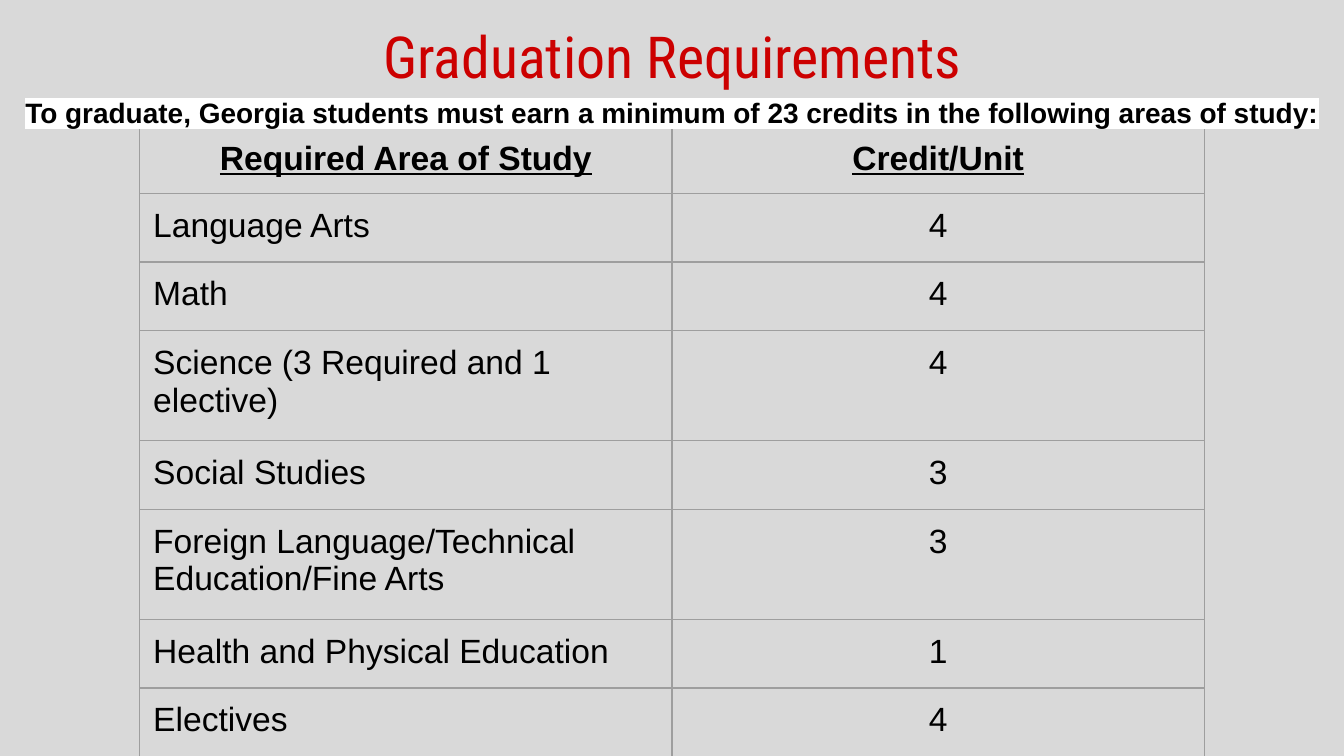
from dataclasses import dataclass

from lxml import etree
from pptx import Presentation
from pptx import util as u
from pptx.dml.color import RGBColor
from pptx.enum import text
from pptx.oxml import ns


@dataclass
class Style:
    size: float
    color: str = "000000"
    font: str = "Arial"
    bold: bool = False
    underline: bool = False
    highlight: str = ""
    align: text.PP_ALIGN = text.PP_ALIGN.LEFT


@dataclass
class Requirement:
    area: str
    credits: str
    height: float = 0.51


CENTER = text.PP_ALIGN.CENTER
TITLE = Style(31, "CC0000", "Roboto Condensed", align=CENTER)
INTRO = Style(15, bold=True, highlight="FFFFFF")
HEADER = Style(18, bold=True, underline=True, align=CENTER)
AREA = Style(18)
CREDIT = Style(18, align=CENTER)

REQUIREMENTS = [
    Requirement("Required Area of Study", "Credit/Unit", 0.5),
    Requirement("Language Arts", "4"),
    Requirement("Math", "4"),
    Requirement("Science (3 Required and 1 elective)", "4", 0.82),
    Requirement("Social Studies", "3"),
    Requirement("Foreign Language/Technical Education/Fine Arts", "3", 0.82),
    Requirement("Health and Physical Education", "1"),
    Requirement("Electives", "4"),
]


def rgb(color: str) -> RGBColor:
    return RGBColor.from_string(color)


def add_solid(parent, tag: str, color: str):
    el = etree.SubElement(parent, ns.qn(tag))
    etree.SubElement(el, ns.qn("a:srgbClr"), val=color)
    return el


def set_insets(obj, inset: float = 0.1) -> None:
    for side in ("left", "top", "right", "bottom"):
        setattr(obj, f"margin_{side}", u.Inches(inset))


def write(tf, content: str, style: Style) -> None:
    tf.text = content
    tf.word_wrap = True
    p = tf.paragraphs[0]
    p.alignment = style.align
    r = p.runs[0]
    r.font.size = u.Pt(style.size)
    r.font.bold = style.bold
    r.font.underline = style.underline
    r.font.color.rgb = rgb(style.color)
    if style.highlight:
        add_solid(r.font._element, "a:highlight", style.highlight)
    r.font.name = style.font


def set_borders(cell, color: str, width: float) -> None:
    tcPr = cell._tc.get_or_add_tcPr()
    for index, side in enumerate(("a:lnL", "a:lnR", "a:lnT", "a:lnB")):
        ln = etree.Element(ns.qn(side), w=str(u.Pt(width)))
        add_solid(ln, "a:solidFill", color)
        tcPr.insert(index, ln)


def add_title(s, content: str) -> None:
    sp = s.shapes.title
    sp.left, sp.top = u.Inches(0.34), u.Inches(0.05)
    sp.width, sp.height = u.Inches(9.32), u.Inches(0.56)
    tf = sp.text_frame
    write(tf, content, TITLE)
    set_insets(tf)
    tf.auto_size = text.MSO_AUTO_SIZE.NONE
    tf.vertical_anchor = text.MSO_ANCHOR.TOP


def add_requirements(s, rows: list[Requirement]) -> None:
    height = sum(row.height for row in rows)
    frame = s.shapes.add_table(len(rows), 2, u.Inches(1.04), u.Inches(0.94),
                               u.Inches(7.92), u.Inches(height))
    table = frame.table
    table.first_row = table.horz_banding = False
    for i, row in enumerate(rows):
        table.rows[i].height = u.Inches(row.height)
        styles = (AREA, CREDIT) if i else (HEADER, HEADER)
        for j, (content, style) in enumerate(zip((row.area, row.credits), styles)):
            cell = table.cell(i, j)
            write(cell.text_frame, content, style)
            set_insets(cell)
            cell.fill.background()
            set_borders(cell, "9E9E9E", 0.75)


def add_intro(s, content: str) -> None:
    sp = s.shapes.add_textbox(u.Inches(0.09), u.Inches(0.61), u.Inches(9.83), u.Inches(0.49))
    tf = sp.text_frame
    write(tf, content, INTRO)
    set_insets(tf)
    tf.margin_right = u.Inches(0.05)
    tf.vertical_anchor = text.MSO_ANCHOR.TOP


def main() -> None:
    prs = Presentation()
    prs.slide_width, prs.slide_height = u.Inches(10), u.Inches(10 * 9 / 16)
    s = prs.slides.add_slide(prs.slide_layouts[5])
    s.background.fill.solid()
    s.background.fill.fore_color.rgb = rgb("D9D9D9")
    add_title(s, "Graduation Requirements")
    add_requirements(s, REQUIREMENTS)
    add_intro(s, "To graduate, Georgia students must earn a minimum of 23 credits "
                 "in the following areas of study:")
    prs.save("out.pptx")


if __name__ == "__main__":
    main()
